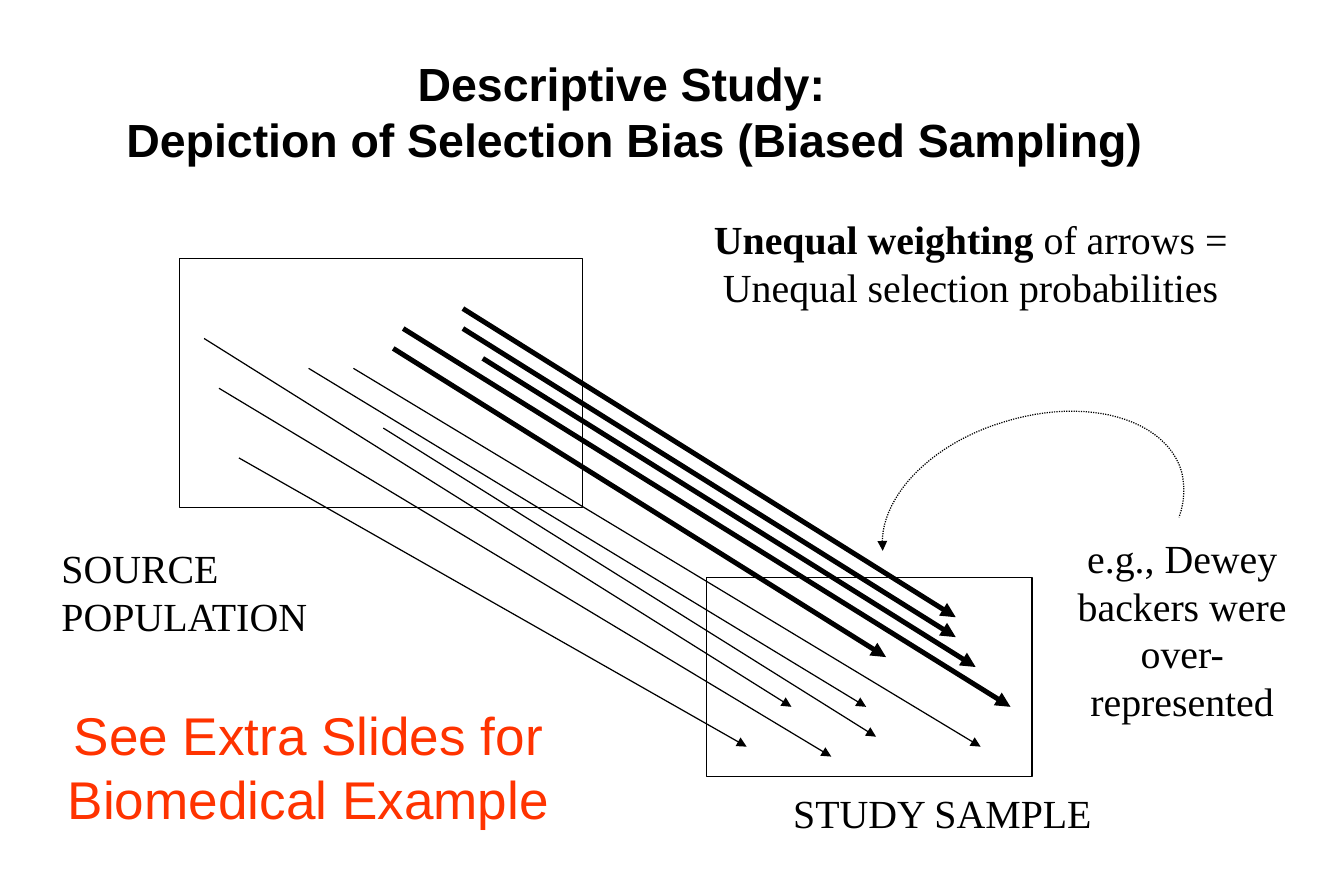
from pptx import Presentation
from pptx.dml.color import RGBColor
from pptx.enum.dml import MSO_LINE
from pptx.enum.shapes import MSO_CONNECTOR, MSO_SHAPE
from pptx.enum.text import PP_ALIGN
from pptx.oxml.xmlchemy import OxmlElement
from pptx.util import Pt

SERIF, SANS = "Times New Roman", "Arial"
BLACK, ORANGE = "000000", "FF3300"
THIN, THICK = 0.75, 3

POPULATION = (108, 156, 243, 150)
SAMPLE = (426, 348, 196, 120)

THICK_ARROWS = [
    ((129, 54), (108, 48)),
    ((135, 42), (183, 78)),
    ((183, 60), (162, 54)),
    ((171, 42), (150, 36)),
    ((171, 30), (150, 24)),
]
THIN_ARROWS = [
    ((36, 120), (24, 102)),
    ((24, 78), (75, 108)),
    ((78, 66), (96, 78)),
    ((15, 48), (51, 78)),
    ((123, 102), (102, 96)),
    ((105, 66), (165, 102)),
]
POINTER_START = (7, 80)
POINTER_CURVES = [
    ((3.5, 49.7), (34.4, 15.8), (80.5, 2.2)),
    ((129.5, -13), (177, 0), (187, 31.7)),
    ((189.2, 40.3), (189.2, 49.7), (185.6, 59.8)),
]


def color(value):
    """Turn a hex string into a colour."""
    return RGBColor.from_string(value)


def add_text(slide, box, paragraphs, font=SERIF, size=24, fill=BLACK,
             align=PP_ALIGN.CENTER, indents=()):
    """Add a text box whose paragraphs are lists of (text, bold) spans."""
    frame = slide.shapes.add_textbox(*map(Pt, box)).text_frame
    frame.word_wrap = True
    for index, spans in enumerate(paragraphs):
        para = frame.add_paragraph() if index else frame.paragraphs[0]
        para.alignment = align
        if index < len(indents):
            para._p.get_or_add_pPr().set("marL", str(Pt(indents[index])))
        for text, bold in spans:
            span = para.add_run()
            span.text = text
            span.font.name, span.font.size = font, Pt(size)
            span.font.bold = bold
            span.font.color.rgb = color(fill)


def style_line(shape, width, arrow_end=None):
    """Draw a black line, with a triangle at headEnd or tailEnd."""
    shape.line.color.rgb = color(BLACK)
    shape.line.width = Pt(width)
    if arrow_end:
        end = OxmlElement(f"a:{arrow_end}")
        end.set("type", "triangle")
        shape.get_or_add_ln().append(end)


def add_frame(slide, box):
    """Add the outline of a group of people."""
    frame = slide.shapes.add_shape(MSO_SHAPE.RECTANGLE, *map(Pt, box))
    frame.shadow.inherit = False
    frame.fill.background()
    style_line(frame, THIN)


def add_arrows(slide, source, target, arrows, width):
    """Add arrows that start inside the source box and end inside the target."""
    for (x1, y1), (x2, y2) in arrows:
        arrow = slide.shapes.add_connector(
            MSO_CONNECTOR.STRAIGHT,
            Pt(source[0] + x1), Pt(source[1] + y1),
            Pt(target[0] + x2), Pt(target[1] + y2))
        style_line(arrow, width, "tailEnd")
        arrow._element.spPr.append(OxmlElement("a:effectLst"))


def curve_points(start, curves, steps=24):
    """Return points along a chain of cubic Bézier curves."""
    points = []
    for first, second, end in curves:
        for step in range(1, steps + 1):
            t = step / steps
            points.append(tuple(
                (1 - t) ** 3 * a + 3 * (1 - t) ** 2 * t * b
                + 3 * (1 - t) * t ** 2 * c + t ** 3 * d
                for a, b, c, d in zip(start, first, second, end)))
        start = end
    return points


def add_pointer(slide, left, top):
    """Add the dotted curve that leads from the example to the arrows."""
    start, *points = [
        (Pt(left + x), Pt(top + y))
        for x, y in [POINTER_START, *curve_points(POINTER_START, POINTER_CURVES)]]
    builder = slide.shapes.build_freeform(*start)
    builder.add_line_segments(points, close=False)
    pointer = builder.convert_to_shape()
    pointer.shadow.inherit = False
    pointer.fill.background()
    pointer.line.dash_style = MSO_LINE.ROUND_DOT
    style_line(pointer, THIN, "headEnd")


def add_diagram(slide, population, sample):
    """Add both groups, their labels and the arrows between them."""
    add_frame(slide, population)
    add_frame(slide, sample)
    add_arrows(slide, population, sample, THICK_ARROWS, THICK)
    add_arrows(slide, population, sample, THIN_ARROWS, THIN)
    left, top, _, height = population
    add_text(slide, (left - 78, top + height + 18, 180, 65),
             [[("SOURCE POPULATION", False)]], align=PP_ALIGN.LEFT)
    left, top, _, height = sample
    add_text(slide, (left + 45, top + height + 3.6, 200, 36),
             [[("STUDY SAMPLE", False)]], align=PP_ALIGN.LEFT)


def add_notes_around(slide):
    """Add the title and the remarks around the diagram."""
    add_text(slide, (42.5, 29.5, 664, 74),
             [[("Descriptive Study:", True)],
              [("Depiction of Selection Bias (Biased Sampling)", True)]],
             font=SANS, size=28, indents=(0, 15.6))
    add_text(slide, (411, 126, 348, 65.5),
             [[("Unequal weighting ", True),
               ("of arrows = Unequal selection probabilities", False)]])
    add_text(slide, (639, 318, 147, 122),
             [[("e.g., Dewey backers were over-represented", False)]])
    add_text(slide, (33, 420, 306, 84),
             [[("See Extra Slides for Biomedical Example", False)]],
             font=SANS, size=32, fill=ORANGE)


def main():
    """Build the deck and save it."""
    deck = Presentation()
    deck.slide_width, deck.slide_height = Pt(810), Pt(540)
    slide = deck.slides.add_slide(deck.slide_layouts[6])
    add_diagram(slide, POPULATION, SAMPLE)
    add_pointer(slide, 525, 252)
    add_notes_around(slide)
    deck.save("out.pptx")


if __name__ == "__main__":
    main()
